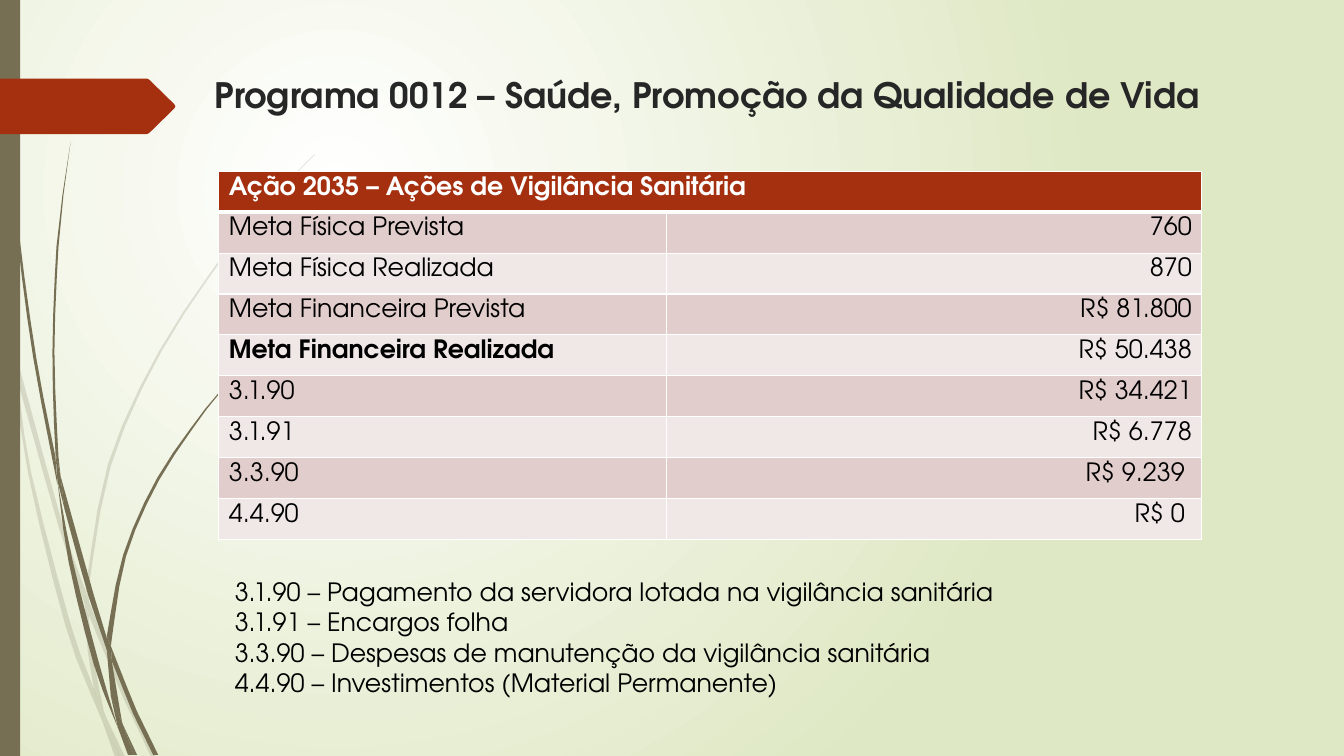
from lxml import etree
from pptx import Presentation
from pptx.dml.color import RGBColor
from pptx.enum.shapes import MSO_SHAPE
from pptx.enum.text import MSO_ANCHOR, PP_ALIGN as Align
from pptx.oxml.ns import qn
from pptx.util import Inches, Pt

FONT = "TeX Gyre Adventor"
WHITE = RGBColor(0xFF, 0xFF, 0xFF)
BLACK = RGBColor(0x00, 0x00, 0x00)
TITLE_GREY = RGBColor(0x26, 0x26, 0x26)
BACKDROP_GREEN = RGBColor(0xDF, 0xE8, 0xC4)
OLIVE = RGBColor(0x76, 0x6F, 0x54)
RUST = RGBColor(0xA5, 0x30, 0x10)
ROW_FILLS = [RGBColor(0xE1, 0xCD, 0xCC), RGBColor(0xF0, 0xE8, 0xE7)]

TITLE = "Programa 0012 – Saúde, Promoção da Qualidade de Vida"
ACTION = "Ação 2035 – Ações de Vigilância Sanitária"
TOTAL_LABEL = "Meta Financeira Realizada"
ACTION_ROWS = [
    ("Meta Física Prevista", "760"),
    ("Meta Física Realizada", "870"),
    ("Meta Financeira Prevista", "R$ 81.800"),
    (TOTAL_LABEL, "R$ 50.438"),
    ("3.1.90", "R$ 34.421"),
    ("3.1.91", "R$ 6.778"),
    ("3.3.90", "R$ 9.239 "),
    ("4.4.90", "R$ 0 "),
]
LEGEND = [
    "3.1.90 – Pagamento da servidora lotada na vigilância sanitária",
    "3.1.91 – Encargos folha",
    "3.3.90 – Despesas de manutenção da vigilância sanitária",
    "4.4.90 – Investimentos (Material Permanente)",
]

# Each blade of grass is a pair of edges, both running the same way, in inches.
PALE_BLADES = [
    ([(0, 2.82), (.09, 3.22), (.11, 3.5)], [(0, 2.99), (.1, 3.44), (.11, 3.5)]),
    ([(.14, 3.45), (.62, 5.2), (.85, 5.86)], [(.17, 3.76), (.58, 5.22), (.84, 5.99)]),
    ([(.88, 5.96), (1.27, 6.92), (1.55, 7.51)], [(.88, 6.1), (1.23, 6.94), (1.5, 7.51)]),
    ([(1.05, 7.11), (1.24, 7.51)], [(1.05, 7.11), (1.19, 7.51)]),
    ([(.11, 3.5), (.17, 3.76), (.31, 4.69), (.7, 6.19), (.93, 6.83), (1.01, 7.14)],
     [(.11, 3.5), (.28, 4.7), (.65, 6.21), (.92, 6.93), (1.01, 7.14)]),
    ([(.84, 5.99), (.88, 6.1), (.91, 6.46), (1.03, 7.06), (1.05, 7.11)],
     [(.84, 5.99), (.87, 6.46), (.93, 6.83), (1.05, 7.11)]),
    ([(3.12, 1.53), (2.68, 1.97), (2.28, 2.44), (1.58, 3.48), (1.07, 4.61), (.85, 5.84)],
     [(3.12, 1.54), (2.68, 1.98), (2.29, 2.45), (1.6, 3.49), (1.1, 4.62), (.88, 5.84), (.88, 5.96)]),
    ([(1.01, 7.14), (1.19, 7.51)], [(1.01, 7.14), (1.14, 7.51)]),
    ([(.85, 5.86), (.88, 5.96), (.88, 6.1)], [(.85, 5.86), (.84, 5.99), (.88, 6.08)]),
    ([(.93, 6.83), (1.05, 7.11), (1.19, 7.51)], [(.93, 6.83), (1.01, 7.14), (1.19, 7.51)]),
]
DARK_BLADES = [
    ([(.03, 0), (.04, .48), (.07, 1.1), (.17, 2.33), (.33, 3.55), (.57, 4.81)],
     [(.04, 0), (.05, .48), (.08, 1.09), (.19, 2.32), (.36, 3.55), (.55, 4.53)]),
    ([(.6, 4.72), (.93, 5.9), (1.06, 6.33)], [(.64, 5.05), (.88, 5.92), (1.06, 6.45)]),
    ([(1.1, 6.41), (1.36, 7.06), (1.57, 7.49)], [(1.11, 6.56), (1.32, 7.08), (1.52, 7.49)]),
    ([(.57, 4.77), (.72, 5.56), (.98, 6.57), (1.17, 7.22)],
     [(.57, 4.77), (.68, 5.57), (.93, 6.59), (1.17, 7.22)]),
    ([(.7, 1.41), (.62, 1.93), (.56, 2.45), (.52, 3.49), (.55, 4.49), (.6, 4.72)],
     [(.7, 1.41), (.63, 1.93), (.58, 2.45), (.54, 3.49), (.58, 4.53), (.6, 4.72)]),
    ([(1.22, 7.19), (1.36, 7.49)], [(1.22, 7.19), (1.33, 7.49)]),
    ([(.55, 4.49), (.6, 4.72), (.64, 5.05)], [(.55, 4.49), (.57, 4.77), (.64, 5.05)]),
    ([(2.6, 3.44), (2.31, 3.73), (2.04, 4.05), (1.56, 4.74), (1.22, 5.51), (1.06, 6.31)],
     [(2.61, 3.44), (2.31, 3.74), (2.05, 4.06), (1.58, 4.76), (1.25, 5.52), (1.11, 6.33), (1.1, 6.41)]),
    ([(1.17, 7.22), (1.31, 7.49)], [(1.17, 7.22), (1.27, 7.49)]),
    ([(1.06, 6.45), (1.11, 6.56), (1.21, 7.16)], [(1.06, 6.45), (1.1, 6.91), (1.22, 7.19)]),
    ([(1.06, 6.31), (1.1, 6.41), (1.11, 6.56)], [(1.06, 6.31), (1.06, 6.45), (1.11, 6.56)]),
    ([(1.1, 6.91), (1.22, 7.19), (1.33, 7.49)], [(1.1, 6.91), (1.17, 7.22), (1.3, 7.49)]),
]


def write_text(frame, text, size=18, color=BLACK, bold=False, align=Align.LEFT, first=True):
    paragraph = frame.paragraphs[0] if first else frame.add_paragraph()
    paragraph.alignment = align
    run = paragraph.add_run()
    run.text = text
    font = run.font
    font.name, font.size, font.bold = FONT, Pt(size), bold
    font.color.rgb = color


def add_text_box(slide, box, lines, **text_format):
    frame = slide.shapes.add_textbox(*map(Inches, box)).text_frame
    frame.word_wrap = True
    for index, line in enumerate(lines):
        write_text(frame, line, first=index == 0, **text_format)


def paint(shape, color, alpha=100):
    shape.shadow.inherit = False
    shape.line.fill.background()
    shape.fill.solid()
    shape.fill.fore_color.rgb = color
    if alpha < 100:
        tint = shape.fill._xPr.find(".//" + qn("a:srgbClr"))
        etree.SubElement(tint, qn("a:alpha"), val=str(alpha * 1000))


def smooth_edge(points):
    """Return points along a Catmull-Rom curve; short edges stay as they are."""
    if abs(points[-1][1] - points[0][1]) < 1:
        return points
    padded = [points[0], *points, points[-1]]
    curve = []
    for p0, p1, p2, p3 in zip(padded, padded[1:], padded[2:], padded[3:]):
        steps = 3 if abs(p2[1] - p1[1]) > .6 else 1
        for t in (step / steps for step in range(steps)):
            curve.append(tuple(
                b + .5 * t * (c - a + t * (2 * a - 5 * b + 4 * c - d + t * (3 * (b - c) + d - a)))
                for a, b, c, d in zip(p0, p1, p2, p3)))
    return curve + [points[-1]]


def add_outline(slide, points, color, alpha=100):
    start, *rest = [(Inches(x), Inches(y)) for x, y in points]
    builder = slide.shapes.build_freeform(*start)
    builder.add_line_segments(rest, close=True)
    paint(builder.convert_to_shape(), color, alpha)


def add_blades(slide, blades, alpha=100):
    for edge, other_edge in blades:
        outline = smooth_edge(edge) + smooth_edge(other_edge)[::-1]
        add_outline(slide, list(dict.fromkeys(outline)), OLIVE, alpha)


def fill_background(slide):
    fill = slide.background.fill
    fill.gradient()
    for stop, color in zip(fill.gradient_stops, (WHITE, BACKDROP_GREEN)):
        stop.color.rgb = color
    linear = next(slide.element.iter(qn("a:lin")))
    radial = etree.Element(qn("a:path"), path="circle")
    etree.SubElement(radial, qn("a:fillToRect"), l="50000", t="50000", r="100000", b="100000")
    linear.getparent().replace(linear, radial)


def add_side_decoration(slide, left, top, width, height):
    add_blades(slide, PALE_BLADES, alpha=20)
    add_blades(slide, DARK_BLADES)
    box = map(Inches, (left, top, width, height))
    paint(slide.shapes.add_shape(MSO_SHAPE.RECTANGLE, *box), OLIVE)


def add_title_arrow(slide, left, top, width, height):
    right, bottom, middle = left + width, top + height, top + height / 2
    shoulder = right - .26
    add_outline(slide, [
        (left, top), (shoulder - .02, top), (shoulder, top + .01),
        (right - .01, middle - .02), (right, middle), (right - .01, middle + .02),
        (shoulder, bottom - .01), (shoulder - .02, bottom), (left, bottom)], RUST)


def set_borders(cell, top=1, bottom=1):
    properties = cell._tc.get_or_add_tcPr()
    sides = {"lnL": 1, "lnR": 1, "lnT": top, "lnB": bottom}
    for index, (side, width) in enumerate(sides.items()):
        line = etree.Element(qn("a:" + side), w=str(Pt(width)))
        fill = etree.SubElement(line, qn("a:solidFill"))
        etree.SubElement(fill, qn("a:srgbClr"), val=str(WHITE))
        properties.insert(index, line)


def style_cell(cell, fill, **borders):
    cell.fill.solid()
    cell.fill.fore_color.rgb = fill
    cell.vertical_anchor = MSO_ANCHOR.TOP
    set_borders(cell, **borders)


def add_action_table(slide, left, top, width, height):
    row_count = len(ACTION_ROWS) + 1
    box = map(Inches, (left, top, width, height))
    table = slide.shapes.add_table(row_count, 2, *box).table
    table.columns[0].width = Inches(4.44)
    table.columns[1].width = Inches(width - 4.44)
    for column in range(2):
        style_cell(table.cell(0, column), RUST, bottom=3)
    table.cell(0, 0).merge(table.cell(0, 1))
    write_text(table.cell(0, 0).text_frame, ACTION, color=WHITE, bold=True)
    for row, (label, value) in enumerate(ACTION_ROWS, start=1):
        for column, (text, align) in enumerate([(label, Align.LEFT), (value, Align.RIGHT)]):
            cell = table.cell(row, column)
            style_cell(cell, ROW_FILLS[(row - 1) % 2], top=3 if row == 1 else 1)
            write_text(cell.text_frame, text, bold=text == TOTAL_LABEL, align=align)


def main():
    presentation = Presentation()
    presentation.slide_width, presentation.slide_height = Inches(13.33), Inches(7.5)
    slide = presentation.slides.add_slide(presentation.slide_layouts[6])
    fill_background(slide)
    add_side_decoration(slide, 0, 0, .2, 7.5)
    add_title_arrow(slide, 0, .78, 1.74, .55)
    add_text_box(slide, (2.03, .68, 10.56, .8), [TITLE], size=25, color=TITLE_GREY, bold=True)
    add_action_table(slide, 2.17, 1.7, 9.75, 3.65)
    add_text_box(slide, (2.23, 5.67, 9.65, 1.62), LEGEND)
    presentation.save("out.pptx")


if __name__ == "__main__":
    main()
